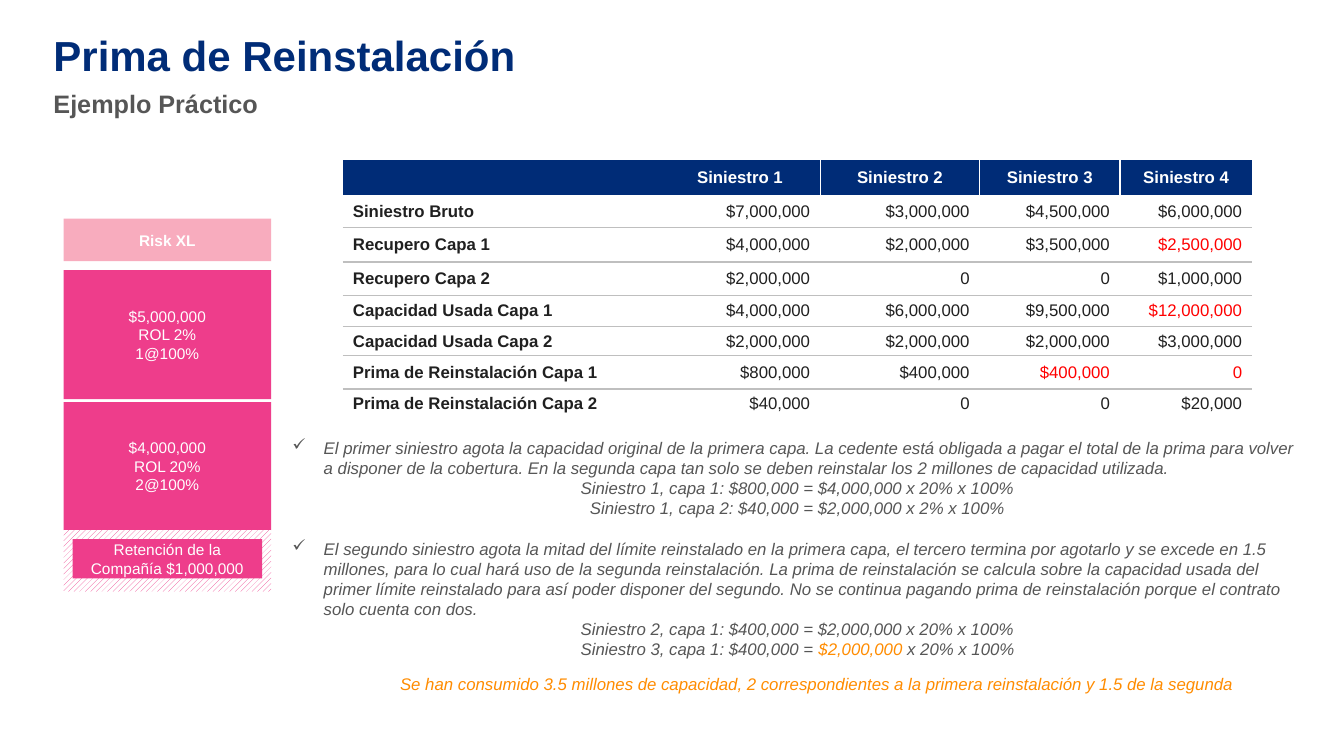
import pptx
import pptx.dml.color
import pptx.enum.dml
import pptx.enum.shapes
import pptx.enum.text
import pptx.oxml
import pptx.oxml.ns
import pptx.util

WIDE, HIGH = pptx.util.Inches(13.33), pptx.util.Inches(7.5)
PAGE = (0, 0, WIDE, HIGH)
HUES = {"navy": "002C77", "gray": "565656", "pink": "EE3D8B", "rose": "F8ACBE",
        "white": "FFFFFF", "gold": "FF8C00", "red": "FF0000", "ink": "202020",
        "rule": "BFBFBF"}
ALIGN = pptx.enum.text.PP_ALIGN
MIDDLE = pptx.enum.text.MSO_ANCHOR.MIDDLE
PLAIN = "{2D5ABB26-0587-4C30-8999-92F81FD0307C}"

COLS = [3.14, 1.59, 1.58, 1.39, 1.31]
ROWS = [0.34, 0.33, 0.34, 0.33, 0.31, 0.29, 0.33, 0.29]
CLAIMS = [
    ["", "Siniestro 1", "Siniestro 2", "Siniestro 3", "Siniestro 4"],
    ["Siniestro Bruto", "$7,000,000", "$3,000,000", "$4,500,000", "$6,000,000"],
    ["Recupero Capa 1", "$4,000,000", "$2,000,000", "$3,500,000", "$2,500,000"],
    ["Recupero Capa 2", "$2,000,000", "0", "0", "$1,000,000"],
    ["Capacidad Usada Capa 1", "$4,000,000", "$6,000,000", "$9,500,000", "$12,000,000"],
    ["Capacidad Usada Capa 2", "$2,000,000", "$2,000,000", "$2,000,000", "$3,000,000"],
    ["Prima de Reinstalación Capa 1", "$800,000", "$400,000", "$400,000", "0"],
    ["Prima de Reinstalación Capa 2", "$40,000", "0", "0", "$20,000"],
]
ALERTS = {(2, 4), (4, 4), (6, 3), (6, 4)}

NOTES = [
    ("El primer siniestro agota la capacidad original de la primera capa. La cedente está "
     "obligada a pagar el total de la prima para volver a disponer de la cobertura. En la "
     "segunda capa tan solo se deben reinstalar los 2 millones de capacidad utilizada.",
     ["Siniestro 1, capa 1: $800,000 = $4,000,000 x 20% x 100%"],
     ["Siniestro 1, capa 2: $40,000 = $2,000,000 x 2% x 100%"]),
    ("El segundo siniestro agota la mitad del límite reinstalado en la primera capa, el "
     "tercero termina por agotarlo y se excede en 1.5 millones, para lo cual hará uso de la "
     "segunda reinstalación. La prima de reinstalación se calcula sobre la capacidad usada "
     "del primer límite reinstalado para así poder disponer del segundo. No se continua "
     "pagando prima de reinstalación porque el contrato solo cuenta con dos.",
     ["Siniestro 2, capa 1: $400,000 = $2,000,000 x 20% x 100%"],
     ["Siniestro 3, capa 1: $400,000 = ", "$2,000,000 ", "x 20% x 100%"]),
]


def color(name):
    """Return the named colour."""
    return pptx.dml.color.RGBColor.from_string(HUES[name])


def part(box, x, y, w, h):
    """Return the area at the given percent shares of a box."""
    left, top, wide, high = box
    return (int(left + wide * x / 100), int(top + high * y / 100),
            int(wide * w / 100), int(high * h / 100))


def style(para, size, hue, bold=False, slant=False, align=ALIGN.LEFT):
    """Format a paragraph and its runs."""
    para.alignment = align
    for run in para.runs:
        font = run.font
        font.name, font.size = "Arial", pptx.util.Pt(size)
        font.bold, font.italic = bold, slant
        font.color.rgb = color(hue)


def blank(slide, box):
    """Add a wrapping text box without insets."""
    frame = slide.shapes.add_textbox(*box).text_frame
    frame.word_wrap = True
    frame.margin_left = frame.margin_right = frame.margin_top = frame.margin_bottom = 0
    return frame


def label(slide, box, text, size, hue, **look):
    """Place one line of text and return its paragraph."""
    frame = blank(slide, box)
    frame.text = text
    style(frame.paragraphs[0], size, hue, **look)
    return frame.paragraphs[0]


def block(slide, box, text, hue, bold=False):
    """Place a flat rectangle with centred text."""
    shape = slide.shapes.add_shape(pptx.enum.shapes.MSO_SHAPE.RECTANGLE, *box)
    shape.shadow.inherit = False
    shape.line.fill.background()
    shape.fill.solid()
    shape.fill.fore_color.rgb = color(hue)
    frame = shape.text_frame
    frame.word_wrap, frame.vertical_anchor = True, MIDDLE
    frame.text = text
    for para in frame.paragraphs:
        style(para, 11, "white", bold=bold, align=ALIGN.CENTER)
    return shape


def tower(slide, box):
    """Stack the cover layers above the retained layer."""
    block(slide, part(box, 0, 49.19, 100, 34.32), "$4,000,000\nROL 20%\n2@100%", "pink")
    base = block(slide, part(box, 0, 83.51, 100, 16.49), "", "white")
    base.fill.patterned()
    base.fill.pattern = pptx.enum.dml.MSO_PATTERN.WIDE_UPWARD_DIAGONAL
    base.fill.fore_color.rgb = color("pink")
    base.fill.back_color.rgb = color("white")
    block(slide, part(box, 0, 13.78, 100, 34.59), "$5,000,000\nROL 2%\n1@100%", "pink")
    block(slide, part(box, 4.37, 85.95, 91.26, 10.54),
          "Retención de la Compañía $1,000,000", "pink")
    block(slide, part(box, 0, 0, 100, 11.35), "Risk XL", "rose", bold=True)


def edge(cell, sides, hue):
    """Draw one-point borders on the given sides, in L R T B order."""
    for spot, side in enumerate(sides):
        cell._tc.get_or_add_tcPr().insert(spot, pptx.oxml.parse_xml(
            f'<a:ln{side} {pptx.oxml.ns.nsdecls("a")} w="12700"><a:solidFill>'
            f'<a:srgbClr val="{HUES[hue]}"/></a:solidFill></a:ln{side}>'))


def claims(slide, box):
    """Build the table of claims."""
    table = slide.shapes.add_table(len(ROWS), len(COLS), *box).table
    table._tbl.tblPr.find(pptx.oxml.ns.qn("a:tableStyleId")).text = PLAIN
    table.first_row = table.horz_banding = False
    for col, size in zip(table.columns, COLS):
        col.width = int(box[2] * size / sum(COLS))
    for row, size in zip(table.rows, ROWS):
        row.height = int(box[3] * size / sum(ROWS))
    for r, line in enumerate(CLAIMS):
        for c, text in enumerate(line):
            cell = table.cell(r, c)
            cell.text = text
            cell.vertical_anchor = MIDDLE
            cell.margin_top = cell.margin_bottom = 0
            para = cell.text_frame.paragraphs[0]
            if r == 0:
                cell.fill.solid()
                cell.fill.fore_color.rgb = color("navy")
                edge(cell, "L" * (c > 1) + "R" * (0 < c < 4), "white")
                style(para, 12, "white", bold=True, align=ALIGN.CENTER)
                continue
            cell.fill.background()
            edge(cell, "B" * (r < len(ROWS) - 1), "rule")
            style(para, 12, "red" if (r, c) in ALERTS else "ink", bold=c == 0,
                  align=ALIGN.RIGHT if c else ALIGN.LEFT)


def check(para):
    """Give a paragraph a hanging check mark."""
    props = para._p.get_or_add_pPr()
    inset = pptx.util.Inches(0.31)
    props.set("marL", str(inset))
    props.set("indent", str(-inset))
    props.append(pptx.oxml.parse_xml(
        f'<a:buChar {pptx.oxml.ns.nsdecls("a")} char="✓"/>'))


def notes(slide, box):
    """Write the checked remarks with their sums."""
    frame = blank(slide, box)
    for spot, (text, *sums) in enumerate(NOTES):
        para = frame.add_paragraph() if spot else frame.paragraphs[0]
        check(para)
        para.text = text
        if spot:
            para.space_before = pptx.util.Pt(14.4)
        style(para, 12, "gray", slant=True)
        for bits in sums:
            para = frame.add_paragraph()
            for bit in bits:
                para.add_run().text = bit
            style(para, 12, "gray", slant=True, align=ALIGN.CENTER)
            for run in para.runs[1:2]:
                run.font.color.rgb = color("gold")


def main():
    """Build the slide and save it."""
    deck = pptx.Presentation()
    deck.slide_width, deck.slide_height = WIDE, HIGH
    slide = deck.slides.add_slide(deck.slide_layouts[6])
    title = label(slide, part(PAGE, 3.98, 5.2, 92.05, 7.2),
                  "Prima de Reinstalación", 30, "navy", bold=True)
    title.line_spacing = 0.8
    label(slide, part(PAGE, 3.98, 11.73, 92.12, 4.67),
          "Ejemplo Práctico", 18, "gray", bold=True)
    tower(slide, part(PAGE, 4.73, 28.93, 15.45, 49.33))
    notes(slide, part(PAGE, 21.76, 57.87, 75.17, 29.6))
    claims(slide, part(PAGE, 25.51, 21.2, 67.67, 34.13))
    label(slide, part(PAGE, 27.83, 89.07, 65.94, 2.67),
          "Se han consumido 3.5 millones de capacidad, 2 correspondientes a la primera "
          "reinstalación y 1.5 de la segunda", 12, "gold", slant=True, align=ALIGN.CENTER)
    deck.save("out.pptx")


if __name__ == "__main__":
    main()
